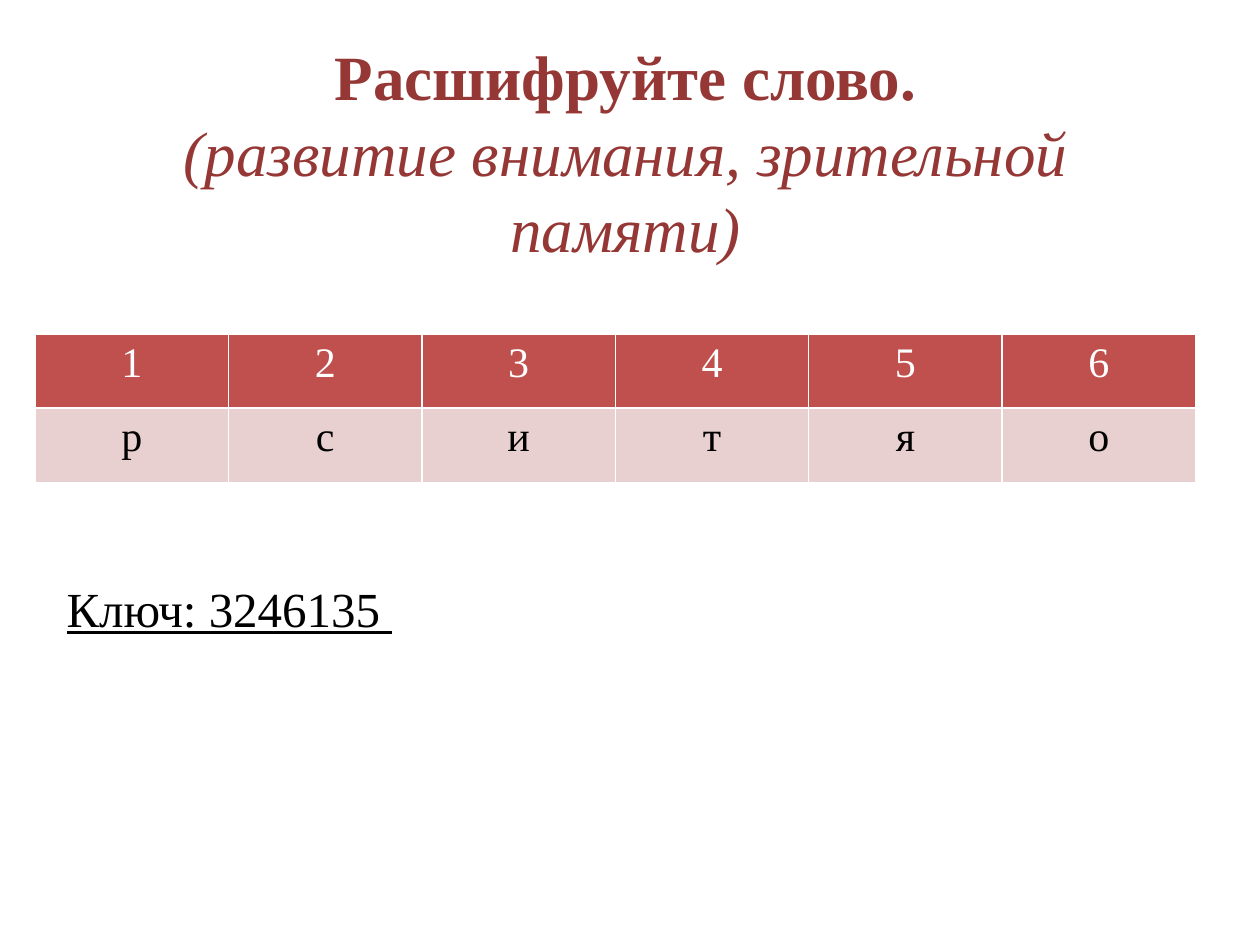
"""Build a word-decoding exercise slide with a letter table and its key."""
from lxml import etree
from pptx import Presentation
from pptx.dml.color import RGBColor
from pptx.enum.text import MSO_ANCHOR, MSO_AUTO_SIZE, PP_ALIGN
from pptx.oxml.ns import qn
from pptx.util import Inches, Pt

CENTER = PP_ALIGN.CENTER
MIDDLE = MSO_ANCHOR.MIDDLE
GROW = MSO_AUTO_SIZE.SHAPE_TO_FIT_TEXT
TITLE_ONLY = 5

FONT = "Times New Roman"
DARK_RED = RGBColor(0x95, 0x37, 0x35)
RED = RGBColor(0xC0, 0x50, 0x4D)
PINK = RGBColor(0xE8, 0xD0, 0xD0)
WHITE = RGBColor(0xFF, 0xFF, 0xFF)
BLACK = RGBColor(0x00, 0x00, 0x00)

LETTERS = "рситяо"


def format_run(r, size, color, bold=False, italic=False, underline=False):
    """Set the font of one run."""
    font = r.font
    font.name, font.size = FONT, Pt(size)
    font.color.rgb = color
    font.bold, font.italic, font.underline = bold, italic, underline


def place(sp, left, top, width, height):
    """Move and size a shape, in inches."""
    sp.left, sp.top = Inches(left), Inches(top)
    sp.width, sp.height = Inches(width), Inches(height)


def add_title(s):
    """Fill the title with a bold heading and an italic subtitle."""
    sp = s.shapes.title
    place(sp, 0.43, 0.3, 9.07, 1.8)
    tf = sp.text_frame
    tf.text = "Расшифруйте слово.\v(развитие внимания, зрительной памяти)"
    tf.vertical_anchor = MIDDLE
    p = tf.paragraphs[0]
    p.alignment = CENTER
    heading, subtitle = p.runs
    format_run(heading, 36, DARK_RED, bold=True)
    format_run(subtitle, 36, DARK_RED, italic=True)


def add_borders(cell, width, color):
    """Draw the same line on all four sides of a cell."""
    tc_pr = cell._tc.get_or_add_tcPr()
    for side in ("lnL", "lnR", "lnT", "lnB"):
        ln = etree.SubElement(tc_pr, qn(f"a:{side}"), w=str(Pt(width)))
        fill = etree.SubElement(ln, qn("a:solidFill"))
        etree.SubElement(fill, qn("a:srgbClr"), val=str(color))


def fill_cell(cell, text, fill, color):
    """Write a centred symbol in a filled, bordered cell."""
    add_borders(cell, 1, WHITE)
    cell.fill.solid()
    cell.fill.fore_color.rgb = fill
    cell.text = text
    p = cell.text_frame.paragraphs[0]
    p.alignment = CENTER
    format_run(p.runs[0], 24, color)


def add_cipher_table(s):
    """Add the table that pairs each number with a letter."""
    table = s.shapes.add_table(
        2, len(LETTERS), Inches(0.28), Inches(2.65), Inches(9.21), Inches(1.18)
    ).table
    for i, letter in enumerate(LETTERS):
        fill_cell(table.cell(0, i), str(i + 1), RED, WHITE)
        fill_cell(table.cell(1, i), letter, PINK, BLACK)


def add_key(s):
    """Add the underlined key below the table."""
    sp = s.shapes.add_textbox(Inches(0.43), Inches(4.54), Inches(5.35), Inches(0.57))
    tf = sp.text_frame
    tf.word_wrap = True
    tf.auto_size = GROW
    tf.text = "Ключ: 3246135 "
    format_run(tf.paragraphs[0].runs[0], 28, BLACK, underline=True)


def main():
    """Build and save the slide."""
    prs = Presentation()
    prs.slide_width, prs.slide_height = Inches(10), Inches(7.5)
    s = prs.slides.add_slide(prs.slide_layouts[TITLE_ONLY])
    add_title(s)
    add_cipher_table(s)
    add_key(s)
    prs.save("out.pptx")


if __name__ == "__main__":
    main()
